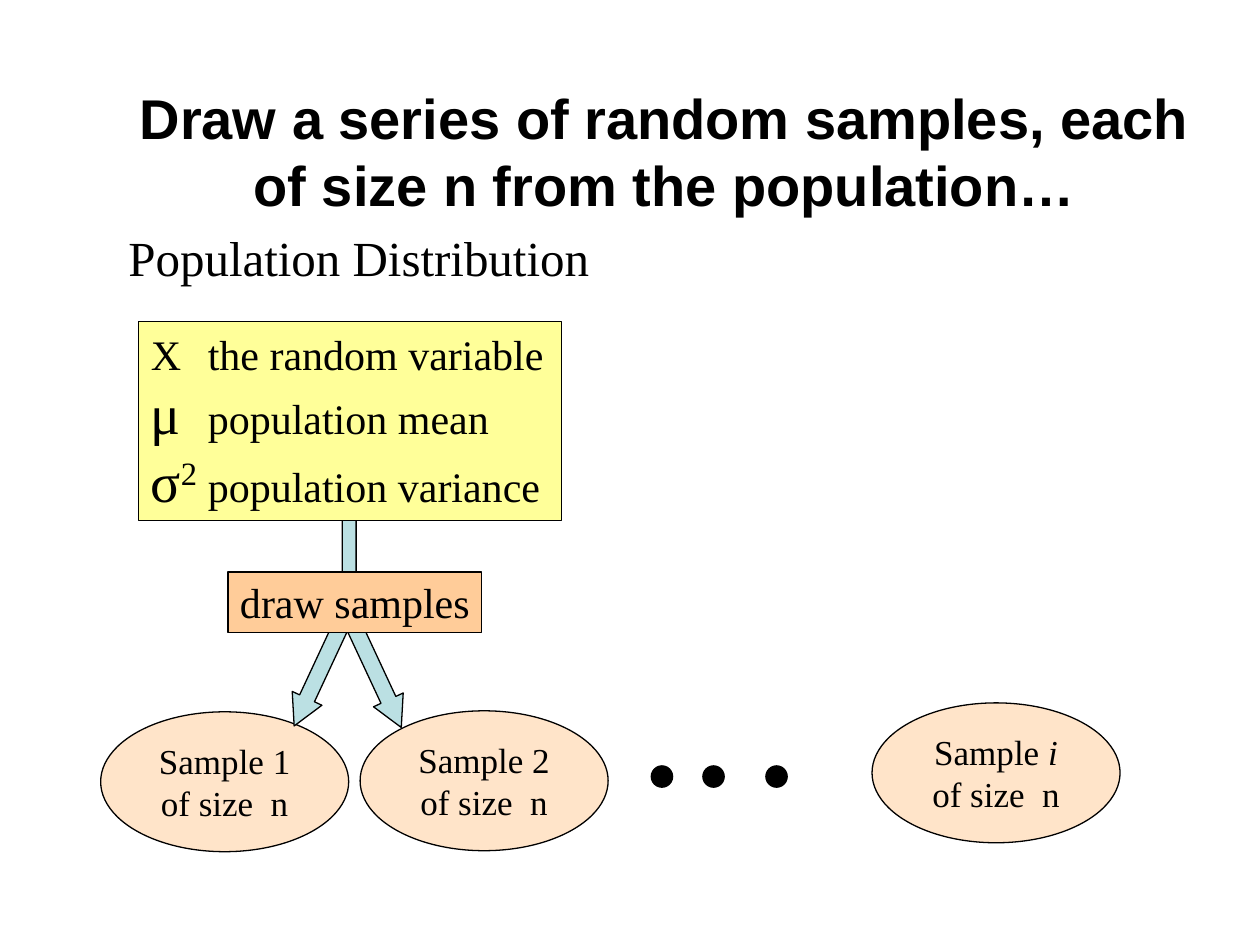
from dataclasses import dataclass
from typing import Optional

from lxml import etree
from pptx import Presentation
from pptx import util as u
from pptx.dml.color import RGBColor
from pptx.enum import shapes, text
from pptx.oxml import ns

BLACK = RGBColor(0x00, 0x00, 0x00)
TEAL = RGBColor(0xBB, 0xE0, 0xE3)
PEACH = RGBColor(0xFF, 0xCC, 0x99)
YELLOW = RGBColor(0xFF, 0xFF, 0x99)
SERIF = "Times New Roman"
SANS = "Arial"
KIND = shapes.MSO_SHAPE
LEFT, MID = text.PP_ALIGN.LEFT, text.PP_ALIGN.CENTER


@dataclass(frozen=True)
class Box:
    x: float
    y: float
    w: float
    h: float

    def place(self) -> tuple:
        return tuple(u.Cm(v) for v in (self.x, self.y, self.w, self.h))


@dataclass(frozen=True)
class Run:
    text: str
    size: int
    font: str = SERIF
    bold: bool = False
    italic: bool = False
    lift: int = 0  # superscript height in percent


@dataclass(frozen=True)
class Arrow:
    box: Box
    head: float
    turn: float = 0


@dataclass(frozen=True)
class Sample:
    x: float
    y: float
    runs: tuple


def write(shape, paras, align, wrap=True, anchor=text.MSO_ANCHOR.MIDDLE,
          tab: Optional[float] = None) -> None:
    """Fill a shape with paragraphs of runs; tab is a stop in cm."""
    frame = shape.text_frame
    frame.word_wrap = wrap
    frame.vertical_anchor = anchor
    for i, runs in enumerate(paras):
        para = frame.add_paragraph() if i else frame.paragraphs[0]
        para.alignment = align
        if tab:
            stops = etree.SubElement(para._p.get_or_add_pPr(), ns.qn("a:tabLst"))
            etree.SubElement(stops, ns.qn("a:tab"), pos=str(u.Cm(tab)), algn="l")
        for item in runs:
            run = para.add_run()
            run.text = item.text
            font = run.font
            font.name, font.size = item.font, u.Pt(item.size)
            font.bold, font.italic = item.bold, item.italic
            font.color.rgb = BLACK
            if item.lift:
                run._r.get_or_add_rPr().set("baseline", str(item.lift * 1000))


def draw(slide, kind, box: Box, fill: RGBColor, alpha: int = 100):
    """Add an outlined shape; alpha is its opacity in percent."""
    shape = slide.shapes.add_shape(kind, *box.place())
    shape.shadow.inherit = False
    shape.fill.solid()
    shape.fill.fore_color.rgb = fill
    if alpha < 100:
        tint = shape._element.spPr.find(ns.qn("a:solidFill"))[0]
        etree.SubElement(tint, ns.qn("a:alpha"), val=str(alpha * 1000))
    shape.line.color.rgb = BLACK
    shape.line.width = u.Pt(0.75)
    return shape


def point(slide, arrow: Arrow) -> None:
    shape = draw(slide, KIND.DOWN_ARROW, arrow.box, TEAL)
    shape.adjustments[0] = 0.5
    shape.adjustments[1] = arrow.head
    shape.rotation = arrow.turn


def label(slide, box: Box, run: Run, align, wrap, anchor) -> None:
    write(slide.shapes.add_textbox(*box.place()), [[run]], align, wrap, anchor)


def sample(slide, item: Sample) -> None:
    shape = draw(slide, KIND.OVAL, Box(item.x, item.y, 5, 2.82), PEACH, 53)
    write(shape, [item.runs], MID)


STEM = Arrow(Box(6.76, 10.41, 0.56, 1.57), 0.72)
RIGHT = Arrow(Box(7.24, 12.32, 0.66, 2.46), 0.93, 335)
DOWN = Arrow(Box(6.12, 12.29, 0.66, 2.46), 0.93, 25)
SAMPLES = (
    Sample(2.03, 14.35, (Run("Sample 1 of size  n", 20),)),
    Sample(7.26, 14.33, (Run("Sample 2 of size  n", 20),)),
    Sample(17.58, 14.17, (Run("Sample ", 20), Run("i ", 20, italic=True),
                          Run("of size  n", 20))),
)
FACTS = (
    (Run("X\t", 24), Run("the random variable", 24)),
    (Run("μ\t", 32), Run("population mean", 24)),
    (Run("σ", 32), Run("2", 32, lift=30), Run("\tpopulation variance", 24)),
)
DOTS = (13.13, 14.17, 15.44)


def main() -> None:
    deck = Presentation()
    deck.slide_width, deck.slide_height = u.Cm(25.4), u.Cm(19.05)
    slide = deck.slides.add_slide(deck.slide_layouts[6])

    point(slide, STEM)
    point(slide, RIGHT)
    title = "Draw a series of random samples, each of size n from the population…"
    label(slide, Box(2.29, 2.18, 22.22, 1.7), Run(title, 32, SANS, bold=True),
          MID, True, text.MSO_ANCHOR.MIDDLE)
    label(slide, Box(2.34, 4.45, 9.8, 1.45), Run("Population Distribution", 28),
          LEFT, False, text.MSO_ANCHOR.MIDDLE)
    for item in SAMPLES[:2]:
        sample(slide, item)

    facts = draw(slide, KIND.RECTANGLE, Box(2.79, 6.48, 8.53, 4.01), YELLOW)
    write(facts, FACTS, LEFT, tab=1.15)
    point(slide, DOWN)
    step = draw(slide, KIND.RECTANGLE, Box(4.6, 11.53, 5.11, 1.22), PEACH)
    write(step, [[Run("draw samples", 24)]], MID, wrap=False)

    sample(slide, SAMPLES[2])
    for x in DOTS:
        draw(slide, KIND.FLOWCHART_CONNECTOR, Box(x, 15.44, 0.43, 0.43), BLACK)
    deck.save("out.pptx")


if __name__ == "__main__":
    main()
